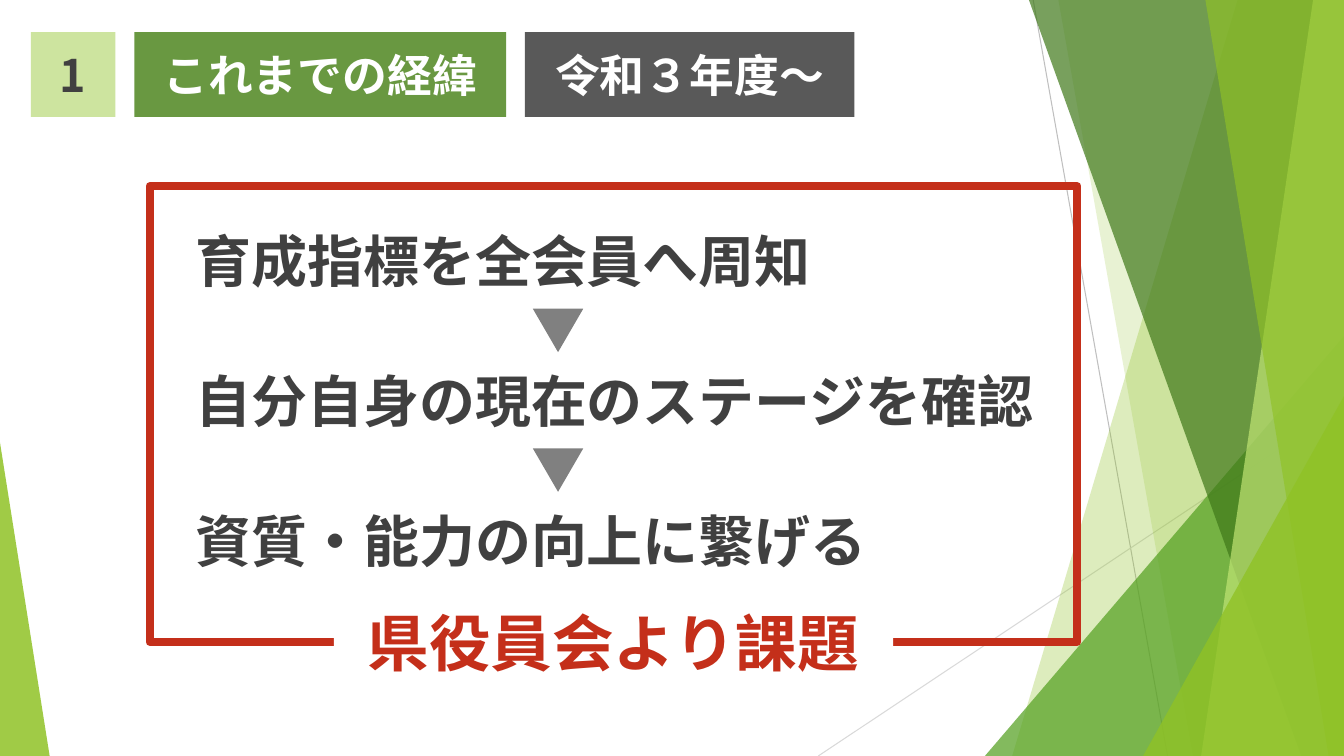
"""Build the slide on the background since Reiwa 3, with green facets at the sides."""
from lxml import etree
from pptx import Presentation
from pptx.dml.color import RGBColor
from pptx.enum.shapes import MSO_CONNECTOR, MSO_SHAPE
from pptx.enum.text import MSO_ANCHOR, PP_ALIGN
from pptx.oxml.ns import qn
from pptx.util import Pt

RECT, TRI = MSO_SHAPE.RECTANGLE, MSO_SHAPE.ISOSCELES_TRIANGLE
STRAIGHT = MSO_CONNECTOR.STRAIGHT
TOP, MIDDLE = MSO_ANCHOR.TOP, MSO_ANCHOR.MIDDLE
LEFT, CENTER = PP_ALIGN.LEFT, PP_ALIGN.CENTER

THEME = {
    "font": "Noto Sans CJK JP",
    "head": 32, "step": 40, "task": 44,
    "ink": "404040", "white": "FFFFFF", "red": "C42F1A", "arrow": "808080",
    "pale": "CDE49F", "leaf": "699841", "slate": "595959",
    "lime": "90C226", "green": "54A021", "dark": "3F7819", "light": "C0E474",
    "hair": "BFBFBF", "faint": "D9D9D9",
}

WIDE, HIGH = 960, 540
HEADS = [
    ("1", 60.5, "pale", "ink"),
    ("これまでの経緯", 265.5, "leaf", "white"),
    ("令和３年度～", 235.3, "slate", "white"),
]
STEPS = [
    ("育成指標を全会員へ周知", 579),
    ("自分自身の現在のステージを確認", 617),
    ("資質・能力の向上に繋げる", 617),
]
TASK = "県役員会より課題"
LINES = [((738, 0), (834, HIGH), "hair"), ((WIDE, 290), (584.5, HIGH), "faint")]
FACETS = [
    ("band", 884, 723, "lime", 30),
    ("band", 756, 852, "lime", 20),
    ("peak", (703.5, 240, 256.5, 300), 1, "green", 72),
    ("band", 735, 929.5, "dark", 70),
    ("band", 938, 858, "light", 70),
    ("band", 861, 949, "lime", 65),
    ("peak", (816.5, 283, 143.5, 257), 1, "lime", 80),
    ("peak", (0, 316, 35.5, 224), 0, "lime", 85),
]


def rgb(name):
    return RGBColor.from_string(THEME[name])


def paint(shape, fill=None, alpha=100):
    shape.shadow.inherit = False
    shape.line.fill.background()
    if fill is None:
        shape.fill.background()
        return
    shape.fill.solid()
    shape.fill.fore_color.rgb = rgb(fill)
    if alpha < 100:
        color = shape.fill._xPr.find(qn("a:solidFill"))[0]
        etree.SubElement(color, qn("a:alpha"), val=str(alpha * 1000))


def write(shape, text, size, color, align=CENTER, anchor=MIDDLE):
    frame = shape.text_frame
    frame.text = text
    frame.word_wrap = True
    frame.vertical_anchor = anchor
    para = frame.paragraphs[0]
    para.alignment = align
    font = para.runs[0].font
    font.name, font.size, font.bold = THEME["font"], Pt(THEME[size]), True
    font.color.rgb = rgb(color)
    etree.SubElement(font._element, qn("a:ea"), typeface=THEME["font"])


def put(shapes, kind, box, fill=None, alpha=100):
    shape = shapes.add_shape(kind, *map(Pt, box))
    paint(shape, fill, alpha)
    return shape


def draw_sides(shapes):
    for start, end, color in LINES:
        line = shapes.add_connector(STRAIGHT, *map(Pt, start + end))
        line.line.color.rgb = rgb(color)
        line.line.width = Pt(0.75)
        etree.SubElement(line._element.spPr, qn("a:effectLst"))
    for kind, place, foot, color, alpha in FACETS:
        if kind == "peak":
            put(shapes, TRI, place, color, alpha).adjustments[0] = foot
            continue
        path = shapes.build_freeform(Pt(place), 0)
        rest = [(WIDE, 0), (WIDE, HIGH), (foot, HIGH)]
        path.add_line_segments([(Pt(x), Pt(y)) for x, y in rest])
        paint(path.convert_to_shape(), color, alpha)


def draw_steps(shapes):
    left, top, pitch = 132.5, 158.4, 99.75
    for i, (text, width) in enumerate(STEPS):
        y = top + i * pitch
        box = shapes.add_textbox(*map(Pt, (left, y, width, 55.7)))
        write(box, text, "step", "ink", LEFT, TOP)
        if i:
            spot = (380.6, y - 37.6, 36, 31)
            put(shapes, TRI, spot, "arrow").rotation = 180


def draw_task(shapes):
    frame = put(shapes, RECT, (107, 133, 662.5, 325.5))
    frame.line.color.rgb = rgb("red")
    frame.line.width = Pt(6)
    label = put(shapes, RECT, (238.5, 428.5, 399.5, 60.5), "white")
    write(label, TASK, "task", "red", anchor=TOP)


def draw_heads(shapes):
    x, gap = 22, 13.5
    for text, width, fill, color in HEADS:
        head = put(shapes, RECT, (x, 23, width, 60.5), fill)
        write(head, text, "head", color)
        x += width + gap


def main():
    deck = Presentation()
    deck.slide_width, deck.slide_height = Pt(WIDE), Pt(HIGH)
    shapes = deck.slides.add_slide(deck.slide_layouts[6]).shapes
    for draw in (draw_sides, draw_steps, draw_task, draw_heads):
        draw(shapes)
    deck.save("out.pptx")


if __name__ == "__main__":
    main()
